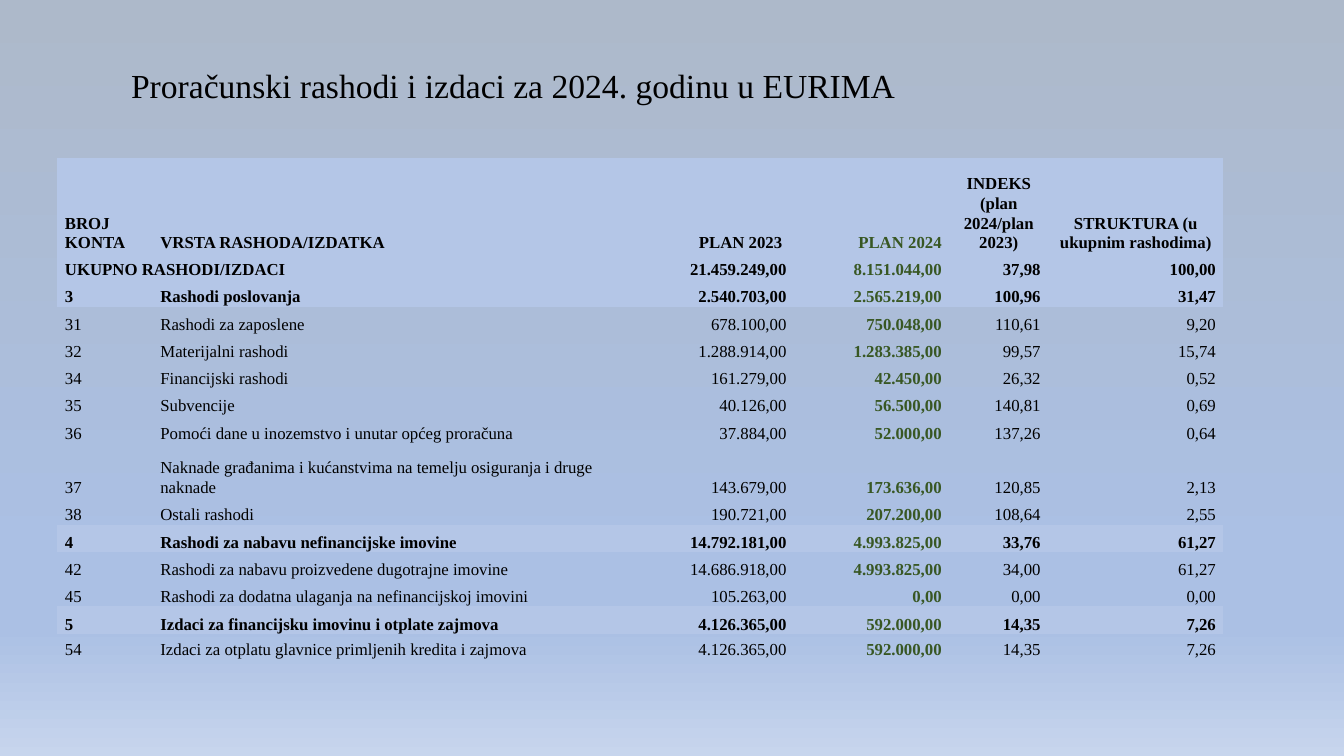
from copy import deepcopy

from pptx import Presentation
from pptx.dml.color import RGBColor
from pptx.enum.text import MSO_ANCHOR, PP_ALIGN
from pptx.oxml.ns import qn
from pptx.util import Pt

LEFT, CENTER, RIGHT = PP_ALIGN.LEFT, PP_ALIGN.CENTER, PP_ALIGN.RIGHT
MIDDLE, BOTTOM = MSO_ANCHOR.MIDDLE, MSO_ANCHOR.BOTTOM
FONT = "Times New Roman"
BLACK, GREEN, BAND = "000000", "385723", "B4C6E7"
NO_STYLE = "{2D5ABB26-0587-4C30-8999-92F81FD0307C}"
BACKGROUND_STOPS = [(0, "ADB9CA"), (0.74, "ABC0E4"), (0.83, "ABC0E4"), (1, "C7D5ED")]

TITLE = "Proračunski rashodi i izdaci za 2024. godinu u EURIMA"
COLUMN_WIDTHS = [68.2, 326.9, 131.2, 110.9, 70.6, 125.2]
HEADER_ALIGN = [LEFT, LEFT, RIGHT, RIGHT, CENTER, CENTER]
BODY_ALIGN = [LEFT, LEFT, RIGHT, RIGHT, RIGHT, RIGHT]
PLAN_2024 = 3
TOTAL_ROW = 1
BOLD_ROWS = {0, TOTAL_ROW, 2, 10, 13}
ROW_HEIGHT = 19.5
SPECIAL_HEIGHTS = {0: 67.5, 1: 19, 8: 39, 14: 18}
ROWS = [
    ["BROJ KONTA", "VRSTA RASHODA/IZDATKA", "PLAN 2023 ", "PLAN 2024",
     "INDEKS (plan 2024/plan 2023)", "STRUKTURA (u ukupnim rashodima)"],
    ["UKUPNO RASHODI/IZDACI", "", "21.459.249,00", "8.151.044,00", "37,98", "100,00"],
    ["3", "Rashodi poslovanja", "2.540.703,00", "2.565.219,00", "100,96", "31,47"],
    ["31", "Rashodi za zaposlene", "678.100,00", "750.048,00", "110,61", "9,20"],
    ["32", "Materijalni rashodi", "1.288.914,00", "1.283.385,00", "99,57", "15,74"],
    ["34", "Financijski rashodi", "161.279,00", "42.450,00", "26,32", "0,52"],
    ["35", "Subvencije", "40.126,00", "56.500,00", "140,81", "0,69"],
    ["36", "Pomoći dane u inozemstvo i unutar općeg proračuna",
     "37.884,00", "52.000,00", "137,26", "0,64"],
    ["37", "Naknade građanima i kućanstvima na temelju osiguranja i druge naknade",
     "143.679,00", "173.636,00", "120,85", "2,13"],
    ["38", "Ostali rashodi", "190.721,00", "207.200,00", "108,64", "2,55"],
    ["4", "Rashodi za nabavu nefinancijske imovine",
     "14.792.181,00", "4.993.825,00", "33,76", "61,27"],
    ["42", "Rashodi za nabavu proizvedene dugotrajne imovine",
     "14.686.918,00", "4.993.825,00", "34,00", "61,27"],
    ["45", "Rashodi za dodatna ulaganja na nefinancijskoj imovini",
     "105.263,00", "0,00", "0,00", "0,00"],
    ["5", "Izdaci za financijsku imovinu i otplate zajmova",
     "4.126.365,00", "592.000,00", "14,35", "7,26"],
    ["54", "Izdaci za otplatu glavnice primljenih kredita i zajmova",
     "4.126.365,00", "592.000,00", "14,35", "7,26"],
]


def rgb(color):
    return RGBColor.from_string(color)


def paint_background(slide):
    fill = slide.background.fill
    fill.gradient()
    fill.gradient_angle = 270
    stop_list = next(slide.element.iter(qn("a:gsLst")))
    for _ in BACKGROUND_STOPS[2:]:
        stop_list.append(deepcopy(stop_list[0]))
    for stop, (position, color) in zip(fill.gradient_stops, BACKGROUND_STOPS):
        stop.position = position
        stop.color.rgb = rgb(color)


def format_paragraph(p, size, color, bold, align, spacing):
    p.font.name = FONT
    p.font.size = Pt(size)
    p.font.bold = bold
    p.font.color.rgb = rgb(color)
    p.alignment = align
    p.line_spacing = spacing


def place_title(slide, left, top, width, height):
    sp = slide.shapes.title
    sp.left, sp.top, sp.width, sp.height = Pt(left), Pt(top), Pt(width), Pt(height)
    tf = sp.text_frame
    tf.text = TITLE
    tf.vertical_anchor = MIDDLE
    format_paragraph(tf.paragraphs[0], 24, BLACK, False, LEFT, 0.9)


def fill_cell(cell, text, row, column):
    cell.margin_left = cell.margin_right = Pt(5.4)
    cell.margin_top = cell.margin_bottom = Pt(0)
    cell.vertical_anchor = BOTTOM
    if row in BOLD_ROWS:
        cell.fill.solid()
        cell.fill.fore_color.rgb = rgb(BAND)
    else:
        cell.fill.background()
    cell.text = text
    p = cell.text_frame.paragraphs[0]
    planned = column == PLAN_2024
    aligns = BODY_ALIGN if row else HEADER_ALIGN
    format_paragraph(p, 12, GREEN if planned else BLACK,
                     planned or row in BOLD_ROWS, aligns[column], 1.07)
    p.space_after = Pt(8)


def add_budget_table(slide, left, top):
    heights = [SPECIAL_HEIGHTS.get(i, ROW_HEIGHT) for i in range(len(ROWS))]
    frame = slide.shapes.add_table(len(ROWS), len(COLUMN_WIDTHS), Pt(left), Pt(top),
                                   Pt(sum(COLUMN_WIDTHS)), Pt(sum(heights)))
    next(frame.element.iter(qn("a:tableStyleId"))).text = NO_STYLE
    table = frame.table
    table.first_row = table.horz_banding = False
    for column, width in zip(table.columns, COLUMN_WIDTHS):
        column.width = Pt(width)
    for row, height in zip(table.rows, heights):
        row.height = Pt(height)
    for i, values in enumerate(ROWS):
        for j, text in enumerate(values):
            fill_cell(table.cell(i, j), text, i, j)
    table.cell(TOTAL_ROW, 0).merge(table.cell(TOTAL_ROW, 1))


def main():
    prs = Presentation()
    prs.slide_width, prs.slide_height = Pt(960), Pt(540)
    slide = prs.slides.add_slide(prs.slide_layouts[5])
    paint_background(slide)
    place_title(slide, 86.4, 22.3, 792, 80.6)
    add_budget_table(slide, 41, 113)
    prs.save("out.pptx")


if __name__ == "__main__":
    main()
